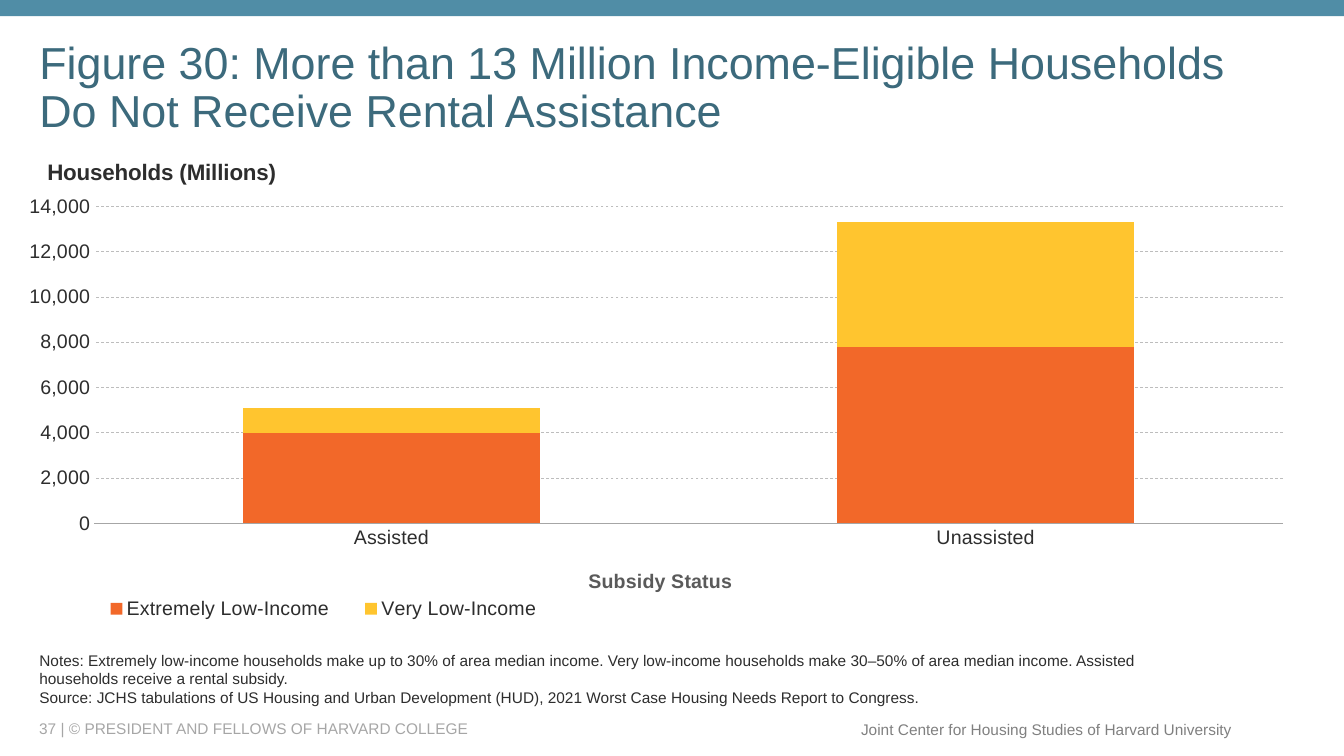
from dataclasses import dataclass

from lxml import etree
from pptx import Presentation
from pptx.chart.data import CategoryChartData
from pptx.dml.color import RGBColor
from pptx.enum.chart import XL_CHART_TYPE, XL_LEGEND_POSITION as LEGEND, XL_TICK_MARK as TICK
from pptx.enum.dml import MSO_LINE
from pptx.enum.shapes import MSO_SHAPE
from pptx.enum.text import MSO_ANCHOR as ANCHOR, MSO_AUTO_SIZE as AUTO, PP_ALIGN as ALIGN
from pptx.oxml import parse_xml
from pptx.oxml.ns import qn
from pptx.util import Inches, Pt


@dataclass(frozen=True)
class Theme:
    font: str = "Arial"
    band: str = "508DA6"
    title: str = "3C6A7C"
    ink: str = "2D2D2D"
    axis_title: str = "5A5A5A"
    copyright: str = "A6A6A6"
    credit: str = "808080"
    axis_line: str = "A6A6A6"
    grid: str = "BDBDBD"
    series: tuple = ("F26829", "FFC52F")
    title_size: int = 32
    heading_size: int = 16
    chart_size: int = 14
    note_size: int = 11


THEME = Theme()


def rgb(color):
    return RGBColor.from_string(color)


def style_font(font, size, color, bold=False):
    font.name = THEME.font
    font.size = Pt(size)
    font.bold = bold
    font.color.rgb = rgb(color)


def place(sp, left, top, width, height):
    sp.left, sp.top = Inches(left), Inches(top)
    sp.width, sp.height = Inches(width), Inches(height)


def write(tf, lines, size, color, anchor=ANCHOR.MIDDLE, align=ALIGN.LEFT, wrap=True, spacing=1.0):
    tf.auto_size = AUTO.NONE
    tf.word_wrap = wrap
    tf.vertical_anchor = anchor
    for i, line in enumerate(lines):
        p = tf.add_paragraph() if i else tf.paragraphs[0]
        p.alignment = align
        p.line_spacing = spacing
        p.space_before = p.space_after = Pt(0)
        r = p.add_run()
        r.text = line
        style_font(r.font, size, color)


def remove_bullets(tf):
    for p in tf.paragraphs:
        pPr = p._p.get_or_add_pPr()
        pPr.set("marL", "0")
        pPr.set("indent", "0")
        etree.SubElement(pPr, qn("a:buNone"))


def add_band(slide):
    sp = slide.shapes.add_shape(MSO_SHAPE.RECTANGLE, 0, 0, Inches(13.33), Inches(0.16))
    sp.shadow.inherit = False
    sp.fill.solid()
    sp.fill.fore_color.rgb = rgb(THEME.band)
    sp.line.fill.background()


def add_footer(slide, text, box, color, align, wrap):
    sp = slide.shapes.add_textbox(*map(Inches, box))
    write(sp.text_frame, [text], THEME.note_size, color, align=align, wrap=wrap)


def set_layout(element, index, inner=False, **fractions):
    """Fix a chart part at fractions (x, y, w, h) of the chart area."""
    old = element.find(qn("c:layout"))
    if old is not None:
        element.remove(old)
    target = '<c:layoutTarget val="inner"/>' if inner else ""
    modes = "".join(f'<c:{k}Mode val="edge"/>' for k in "xy")
    values = "".join(f'<c:{k} val="{v}"/>' for k, v in fractions.items())
    element.insert(index, parse_xml(
        '<c:layout xmlns:c="http://schemas.openxmlformats.org/drawingml/2006/chart">'
        f"<c:manualLayout>{target}{modes}{values}</c:manualLayout></c:layout>"))


def write_chart_title(title, text, size, color, x, y):
    p = title.text_frame.paragraphs[0]
    r = p.add_run()
    r.text = text
    style_font(r.font, size, color, bold=True)
    set_layout(title._element, 1, x=x, y=y)


def style_axes(chart):
    cat, val = chart.category_axis, chart.value_axis
    for axis in (cat, val):
        axis.major_tick_mark = axis.minor_tick_mark = TICK.NONE
        style_font(axis.tick_labels.font, THEME.chart_size, THEME.ink)
    cat.format.line.color.rgb = rgb(THEME.axis_line)
    cat.format.line.width = Pt(0.5)
    write_chart_title(cat.axis_title, "Subsidy Status", THEME.chart_size,
                      THEME.axis_title, 0.435, 0.865)

    val.minimum_scale, val.maximum_scale, val.major_unit = 0, 14000, 2000
    val.tick_labels.number_format = "#,##0"
    val.tick_labels.number_format_is_linked = False
    val.format.line.fill.background()
    val.has_major_gridlines = True
    grid = val.major_gridlines.format.line
    grid.color.rgb = rgb(THEME.grid)
    grid.width = Pt(0.5)
    grid.dash_style = MSO_LINE.DASH


def add_households_chart(slide):
    data = CategoryChartData(number_format="#,##0")
    data.categories = ["Assisted", "Unassisted"]
    data.add_series("Extremely Low-Income", [4000, 7800])
    data.add_series("Very Low-Income", [1100, 5500])
    box = map(Inches, (0.29, 1.38, 12.65, 4.88))
    chart = slide.shapes.add_chart(XL_CHART_TYPE.COLUMN_STACKED, *box, data).chart
    style_font(chart.font, THEME.chart_size, THEME.ink)

    plot = chart.plots[0]
    plot.gap_width = plot.overlap = 100
    plot.vary_by_categories = False
    for series, color in zip(plot.series, THEME.series):
        series.format.fill.solid()
        series.format.fill.fore_color.rgb = rgb(color)
    plot_area = chart._chartSpace.find(".//" + qn("c:plotArea"))
    set_layout(plot_area, 0, inner=True, x=0.05, y=0.137, w=0.933, h=0.644)

    style_axes(chart)
    chart.has_title = True
    write_chart_title(chart.chart_title, "Households (Millions)", THEME.heading_size,
                      THEME.ink, 0.01, 0.03)
    chart.has_legend = True
    legend = chart.legend
    legend.position = LEGEND.BOTTOM
    legend.include_in_layout = False
    style_font(legend.font, THEME.chart_size, THEME.ink)
    set_layout(legend._element, 1, x=0.04, y=0.92, w=0.38, h=0.07)


def main():
    prs = Presentation()
    prs.slide_width, prs.slide_height = Inches(13.33), Inches(7.5)
    slide = prs.slides.add_slide(prs.slide_layouts[1])
    title, notes = slide.placeholders

    add_band(slide)
    place(title, 0.29, 0.4, 12.65, 0.97)
    write(title.text_frame,
          ["Figure 30: More than 13 Million Income-Eligible Households "
           "Do Not Receive Rental Assistance"],
          THEME.title_size, THEME.title, spacing=0.9)
    add_households_chart(slide)

    place(notes, 0.29, 6.48, 11.75, 0.58)
    write(notes.text_frame,
          ["Notes: Extremely low-income households make up to 30% of area median income. "
           "Very low-income households make 30–50% of area median income. "
           "Assisted households receive a rental subsidy.",
           "Source: JCHS tabulations of US Housing and Urban Development (HUD), "
           "2021 Worst Case Housing Needs Report to Congress."],
          THEME.note_size, THEME.ink, anchor=ANCHOR.BOTTOM)
    remove_bullets(notes.text_frame)

    add_footer(slide, "37 | © PRESIDENT AND FELLOWS OF HARVARD COLLEGE",
               (0.29, 7.13, 7.92, 0.2), THEME.copyright, ALIGN.LEFT, True)
    add_footer(slide, "Joint Center for Housing Studies of Harvard University",
               (8.42, 7.09, 3.9, 0.29), THEME.credit, ALIGN.RIGHT, False)
    prs.save("out.pptx")


if __name__ == "__main__":
    main()
